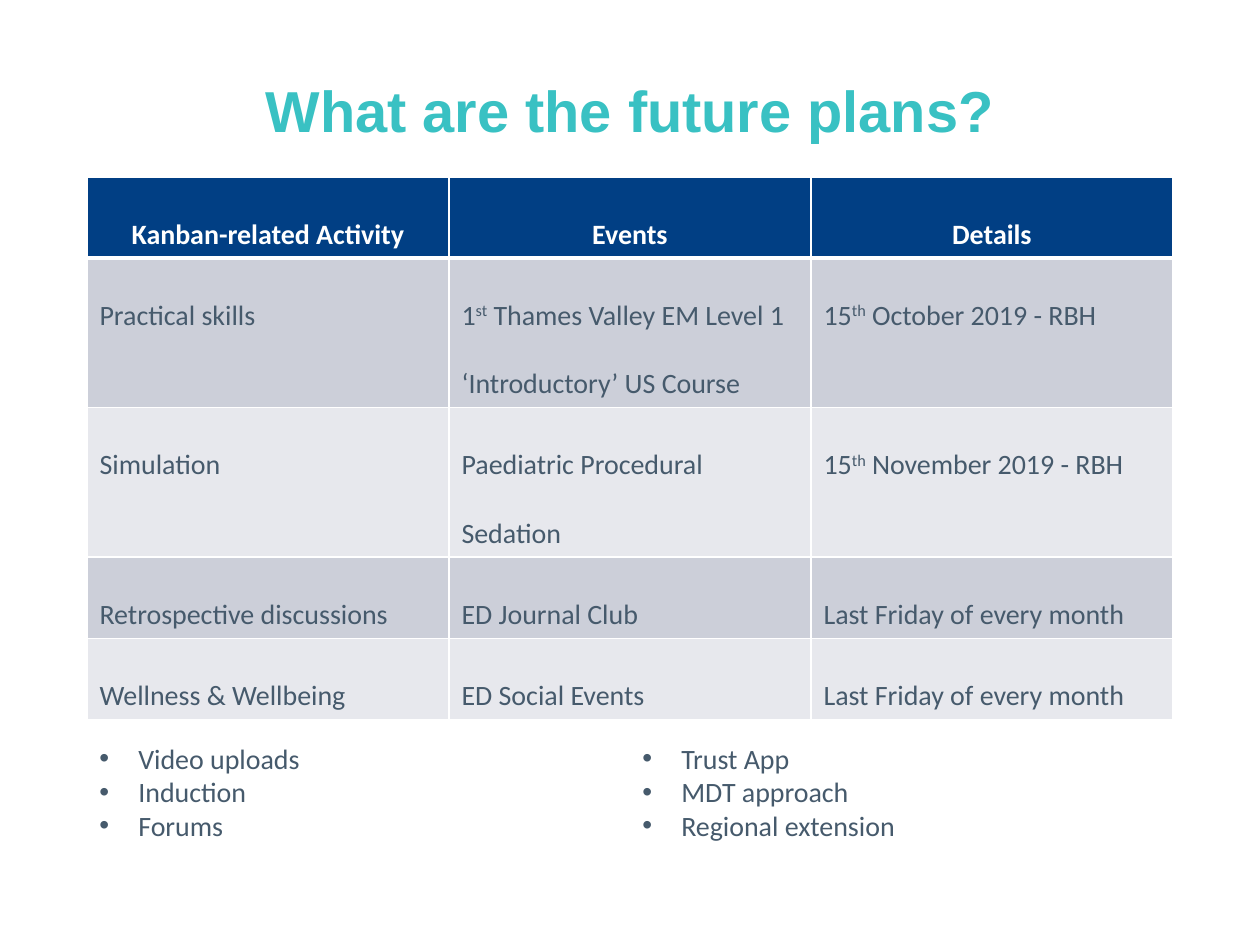
from lxml.etree import SubElement
from pptx import Presentation
from pptx.dml.color import RGBColor
from pptx.enum.text import MSO_ANCHOR, PP_ALIGN
from pptx.oxml.ns import qn
from pptx.util import Pt

EMU_PER_PX = 914400 / 126
NAVY, TEAL, BLUE, SLATE = "013F84", "39C1C3", "005AA8", "465A6C"
WHITE, BANDS = "FFFFFF", ("CCCFD9", "E7E8ED")

# A cell is a list of runs; every second run is superscript.
HEADINGS = [["Kanban-related Activity"], ["Events"], ["Details"]]
PLANS = [
    [["Practical skills"],
     ["1", "st", " Thames Valley EM Level 1 ‘Introductory’ US Course"],
     ["15", "th", " October 2019 - RBH"]],
    [["Simulation"], ["Paediatric Procedural Sedation"],
     ["15", "th", " November 2019 - RBH"]],
    [["Retrospective discussions"], ["ED Journal Club"],
     ["Last Friday of every month"]],
    [["Wellness & Wellbeing"], ["ED Social Events"],
     ["Last Friday of every month"]],
]
IDEAS = [["Video uploads", "Induction", "Forums"],
         ["Trust App", "MDT approach", "Regional extension"]]


def px(length):
    return round(length * EMU_PER_PX)


def rgb(value):
    return RGBColor.from_string(value)


def style(font, color, bold=False):
    font.name, font.size, font.bold = "Calibri", Pt(16), bold
    font.color.rgb = rgb(color)


def add_title(slide, text, left, top, width, height):
    title = slide.shapes.title
    title.left, title.top, title.width, title.height = map(
        px, (left, top, width, height))
    frame = title.text_frame
    frame.margin_left = frame.margin_top = 0
    frame.margin_right = frame.margin_bottom = 0
    frame.vertical_anchor = MSO_ANCHOR.TOP
    frame.text = text
    heading = frame.paragraphs[0]
    heading.alignment, heading.line_spacing = PP_ALIGN.CENTER, 0.9
    font = heading.runs[0].font
    font.name, font.size, font.bold = "Arial", Pt(33), True
    font.fill.gradient()
    font.fill.gradient_angle = 0
    for stop, color in zip(font.fill.gradient_stops, (TEAL, BLUE)):
        stop.color.rgb = rgb(color)


def set_borders(cell, top, bottom):
    """Draw white borders; top and bottom are widths in points."""
    properties = cell._tc.get_or_add_tcPr()
    for side, width in (("L", 1), ("R", 1), ("T", top), ("B", bottom)):
        line = SubElement(properties, qn(f"a:ln{side}"), w=str(Pt(width)))
        fill = SubElement(line, qn("a:solidFill"))
        SubElement(fill, qn("a:srgbClr"), val=WHITE)


def fill_cell(cell, parts, row):
    is_header = row == 0
    set_borders(cell, 3 if row == 1 else 1, 3 if is_header else 1)
    cell.fill.solid()
    cell.fill.fore_color.rgb = rgb(NAVY if is_header else BANDS[(row - 1) % 2])
    paragraph = cell.text_frame.paragraphs[0]
    paragraph.line_spacing = 2.0
    if is_header:
        paragraph.alignment = PP_ALIGN.CENTER
    for index, part in enumerate(parts):
        run = paragraph.add_run()
        run.text = part
        style(run.font, WHITE if is_header else SLATE, is_header)
        if index % 2:
            run.font._element.set("baseline", "30000")


def add_plans_table(slide, rows, left, top, width, row_height):
    columns = len(rows[0])
    table = slide.shapes.add_table(
        len(rows), columns, px(left), px(top), px(width),
        px(row_height * len(rows))).table
    for column in table.columns:
        column.width = px(width / columns)
    for r, row in enumerate(rows):
        for c, parts in enumerate(row):
            fill_cell(table.cell(r, c), parts, r)


def add_bullets(slide, items, left, top, width, height):
    frame = slide.shapes.add_textbox(
        px(left), px(top), px(width), px(height)).text_frame
    frame.word_wrap = True
    frame.text = "\n".join(items)
    for paragraph in frame.paragraphs:
        properties = paragraph._p.get_or_add_pPr()
        properties.set("marL", str(px(39)))
        properties.set("indent", str(px(-39)))
        SubElement(properties, qn("a:buFont"), typeface="Arial")
        SubElement(properties, qn("a:buChar"), char="•")
        style(paragraph.runs[0].font, SLATE)


def main():
    deck = Presentation()
    deck.slide_width, deck.slide_height = px(1260), px(945)
    slide = deck.slides.add_slide(deck.slide_layouts[5])
    left, width = 87, 1086
    add_title(slide, "What are the future plans?", left, 83, width, 106)
    add_plans_table(slide, [HEADINGS] + PLANS, left, 177, width, 52)
    half = width // 2
    for index, items in enumerate(IDEAS):
        add_bullets(slide, items, left + index * half, 735, half, 115)
    deck.save("out.pptx")


if __name__ == "__main__":
    main()
